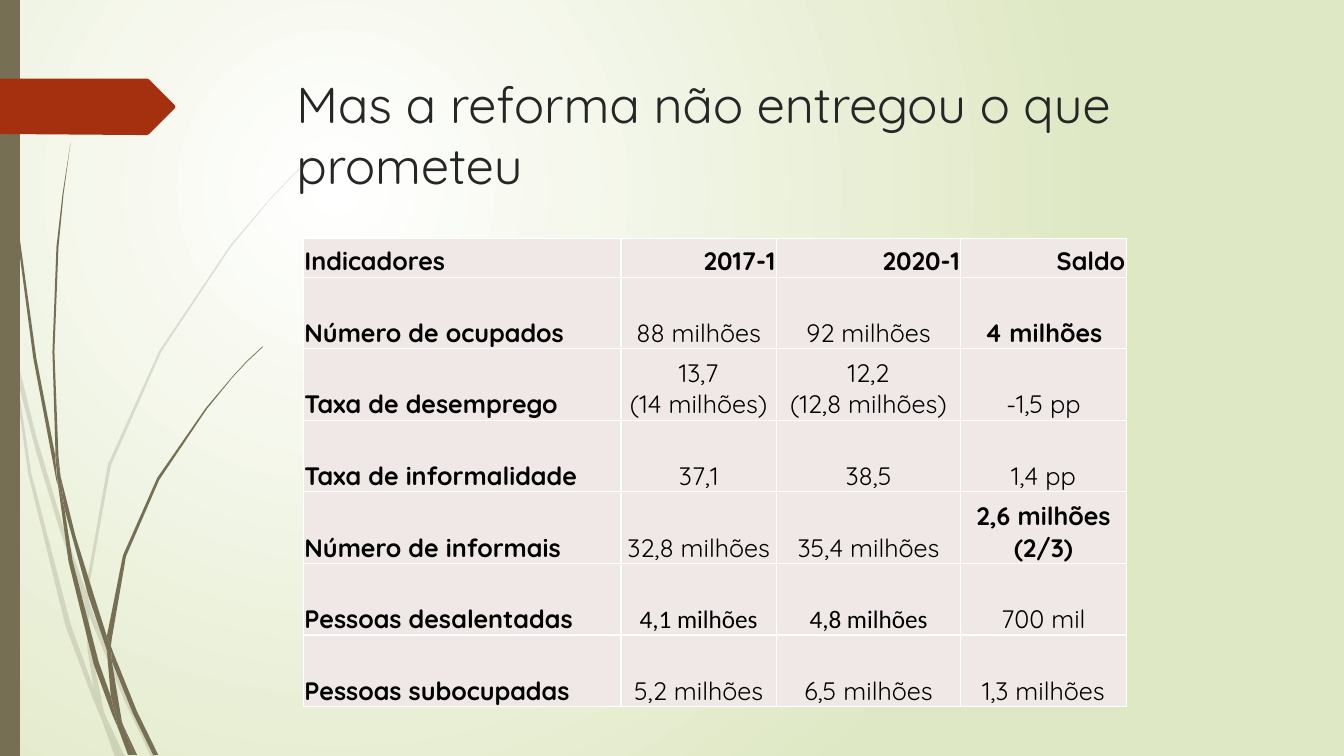
from lxml.etree import SubElement
from pptx import Presentation
from pptx.dml.color import RGBColor
from pptx.enum.text import MSO_ANCHOR, MSO_AUTO_SIZE, PP_ALIGN
from pptx.oxml.ns import qn
from pptx.util import Inches, Pt

COLORS = {"white": "FFFFFF", "sage": "DFE8C4", "olive": "766F54", "rust": "A53010",
          "title": "262626", "text": "000000", "cell": "F0E8E7"}
FONT = "Quicksand"
TITLE = "Mas a reforma não entregou o que prometeu"
ROWS = [
    ("Indicadores", "2017-1", "2020-1", "Saldo"),
    ("Número de ocupados", "88 milhões", "92 milhões", "4 milhões"),
    ("Taxa de desemprego", "13,7\v(14 milhões)", "12,2\v(12,8 milhões)", "-1,5 pp"),
    ("Taxa de informalidade", "37,1", "38,5", "1,4 pp"),
    ("Número de informais", "32,8 milhões", "35,4 milhões", "2,6 milhões (2/3)"),
    ("Pessoas desalentadas", "4,1 milhões", "4,8 milhões", "700 mil"),
    ("Pessoas subocupadas", "5,2 milhões", "6,5 milhões", "1,3 milhões"),
]
BOLD_CELLS = {(1, 3), (4, 3)}
CALIBRI_CELLS = {(5, 1), (5, 2)}
COL_WIDTHS = [3.15, 1.54, 1.83, 1.64]
HEADER_HEIGHT, ROW_HEIGHT = 0.38, 0.71

# Outline points are in hundredths of an inch.
PALE_BLADES = [
    [(11, 350), (9, 322), (0, 282), (0, 299), (10, 344)],
    [(58, 522), (84, 599), (85, 586), (62, 520), (36, 433), (14, 345), (17, 376), (36, 449)],
    [(92, 607), (88, 596), (88, 610), (123, 694), (150, 751), (155, 751), (127, 692)],
    [(119, 751), (124, 751), (105, 711)],
    [(93, 683), (70, 619), (31, 469), (17, 376), (11, 350), (28, 470), (65, 621),
     (92, 693), (101, 714), (99, 707)],
    [(84, 599), (87, 646), (93, 683), (96, 692), (105, 711), (103, 706), (91, 646),
     (88, 610), (88, 608)],
    [(88, 584), (110, 462), (160, 349), (229, 245), (268, 198), (290, 175), (312, 154),
     (312, 153), (289, 175), (268, 197), (228, 244), (158, 348), (107, 461), (85, 584),
     (85, 586), (88, 596)],
    [(101, 714), (114, 751), (119, 751)],
    [(88, 608), (88, 610), (88, 596), (85, 586), (84, 599)],
    [(96, 692), (93, 683), (99, 707), (101, 714), (119, 751), (105, 711)],
]
DARK_BLADES = [
    [(7, 110), (17, 233), (33, 355), (56, 477), (57, 481), (55, 457), (55, 453),
     (36, 355), (19, 232), (8, 109), (5, 48), (4, 0), (3, 0), (4, 48)],
    [(88, 592), (106, 645), (106, 633), (106, 631), (93, 590), (75, 532), (60, 472), (64, 505)],
    [(113, 649), (110, 641), (111, 656), (132, 708), (152, 749), (157, 749), (136, 706)],
    [(110, 691), (98, 657), (72, 556), (64, 505), (57, 477), (68, 557), (93, 659),
     (111, 708), (117, 722), (116, 717)],
    [(60, 472), (58, 453), (54, 349), (58, 245), (63, 193), (70, 141), (62, 193),
     (56, 245), (52, 349), (55, 449)],
    [(133, 749), (136, 749), (122, 719)],
    [(57, 477), (64, 505), (60, 472), (55, 449), (55, 453)],
    [(111, 633), (125, 552), (158, 476), (205, 406), (231, 374), (245, 359), (261, 344),
     (260, 344), (245, 358), (231, 373), (204, 405), (156, 474), (122, 551), (106, 631),
     (110, 641)],
    [(117, 722), (127, 749), (131, 749)],
    [(106, 645), (110, 691), (116, 706), (122, 719), (121, 716), (111, 656), (109, 651)],
    [(106, 645), (109, 651), (111, 656), (110, 641), (106, 631), (106, 633)],
    [(116, 706), (110, 691), (116, 717), (117, 722), (130, 749), (133, 749), (122, 719)],
]
BAR = [(0, 0), (20, 0), (20, 750), (0, 750)]
ARROW = [(0, 78), (146, 78), (148, 79), (173, 104), (174, 106), (173, 108), (148, 133),
         (146, 134), (136, 134), (0, 133)]


def rgb(name):
    return RGBColor.from_string(COLORS[name])


def draw_outline(shapes, points, color, alpha=None):
    builder = shapes.build_freeform(*points[0], scale=Inches(0.01))
    builder.add_line_segments(points[1:], close=True)
    sp = builder.convert_to_shape()
    sp.shadow.inherit = False
    sp.fill.solid()
    sp.fill.fore_color.rgb = rgb(color)
    sp.line.fill.background()
    if alpha:
        clr = sp._element.spPr.find(qn("a:solidFill"))[0]
        SubElement(clr, qn("a:alpha"), val=str(alpha * 1000))


def format_text(p, text, align, font):
    p.text = text
    p.alignment = align
    color = font.pop("color")
    for r in p.runs:
        for name, value in font.items():
            setattr(r.font, name, value)
        r.font.color.rgb = rgb(color)


def paint_background(slide):
    fill = slide.background.fill
    fill.gradient()
    for stop, color in zip(fill.gradient_stops, ("white", "sage")):
        stop.color.rgb = rgb(color)
    grad = slide._element.find(".//" + qn("a:gradFill"))
    grad.remove(grad.find(qn("a:lin")))
    circle = SubElement(grad, qn("a:path"), path="circle")
    SubElement(circle, qn("a:fillToRect"), l="50000", t="50000", r="100000", b="100000")


def add_borders(cell):
    tcPr = cell._tc.get_or_add_tcPr()
    for side in "LRTB":
        ln = SubElement(tcPr, qn(f"a:ln{side}"), w=str(Pt(1)))
        SubElement(SubElement(ln, qn("a:solidFill")), qn("a:srgbClr"), val=COLORS["white"])


def add_indicators(slide):
    height = HEADER_HEIGHT + ROW_HEIGHT * (len(ROWS) - 1)
    table = slide.shapes.add_table(len(ROWS), len(COL_WIDTHS), Inches(3.01), Inches(2.37),
                                   Inches(sum(COL_WIDTHS)), Inches(height)).table
    table.first_row = table.horz_banding = False
    for col, width in zip(table.columns, COL_WIDTHS):
        col.width = Inches(width)
    cell_format = {"vertical_anchor": MSO_ANCHOR.BOTTOM, "margin_left": Inches(0.01),
                   "margin_right": Inches(0.01), "margin_top": Inches(0.01), "margin_bottom": 0}
    for i, row in enumerate(ROWS):
        table.rows[i].height = Inches(ROW_HEIGHT if i else HEADER_HEIGHT)
        for j, text in enumerate(row):
            cell = table.cell(i, j)
            for name, value in cell_format.items():
                setattr(cell, name, value)
            add_borders(cell)
            cell.fill.solid()
            cell.fill.fore_color.rgb = rgb("cell")
            align = PP_ALIGN.LEFT if j == 0 else PP_ALIGN.CENTER if i else PP_ALIGN.RIGHT
            format_text(cell.text_frame.paragraphs[0], text, align, {
                "name": "Calibri" if (i, j) in CALIBRI_CELLS else FONT, "size": Pt(18),
                "bold": i == 0 or j == 0 or (i, j) in BOLD_CELLS, "color": "text"})


def main():
    prs = Presentation()
    prs.slide_width, prs.slide_height = Inches(13.33), Inches(7.5)
    slide = prs.slides.add_slide(prs.slide_layouts[5])
    paint_background(slide)

    for blades, alpha in ((PALE_BLADES, 20), (DARK_BLADES, None)):
        group = slide.shapes.add_group_shape()
        for points in blades:
            draw_outline(group.shapes, points, "olive", alpha)
    draw_outline(slide.shapes, BAR, "olive")
    draw_outline(slide.shapes, ARROW, "rust")

    title = slide.shapes.title
    title.left, title.top, title.width, title.height = map(Inches, (2.84, 0.68, 9.75, 1.4))
    tf = title.text_frame
    for name, value in {"word_wrap": True, "auto_size": MSO_AUTO_SIZE.NONE,
                        "vertical_anchor": MSO_ANCHOR.TOP}.items():
        setattr(tf, name, value)
    format_text(tf.paragraphs[0], TITLE, PP_ALIGN.LEFT,
                {"name": FONT, "size": Pt(36), "color": "title"})
    add_indicators(slide)
    prs.save("out.pptx")


if __name__ == "__main__":
    main()
